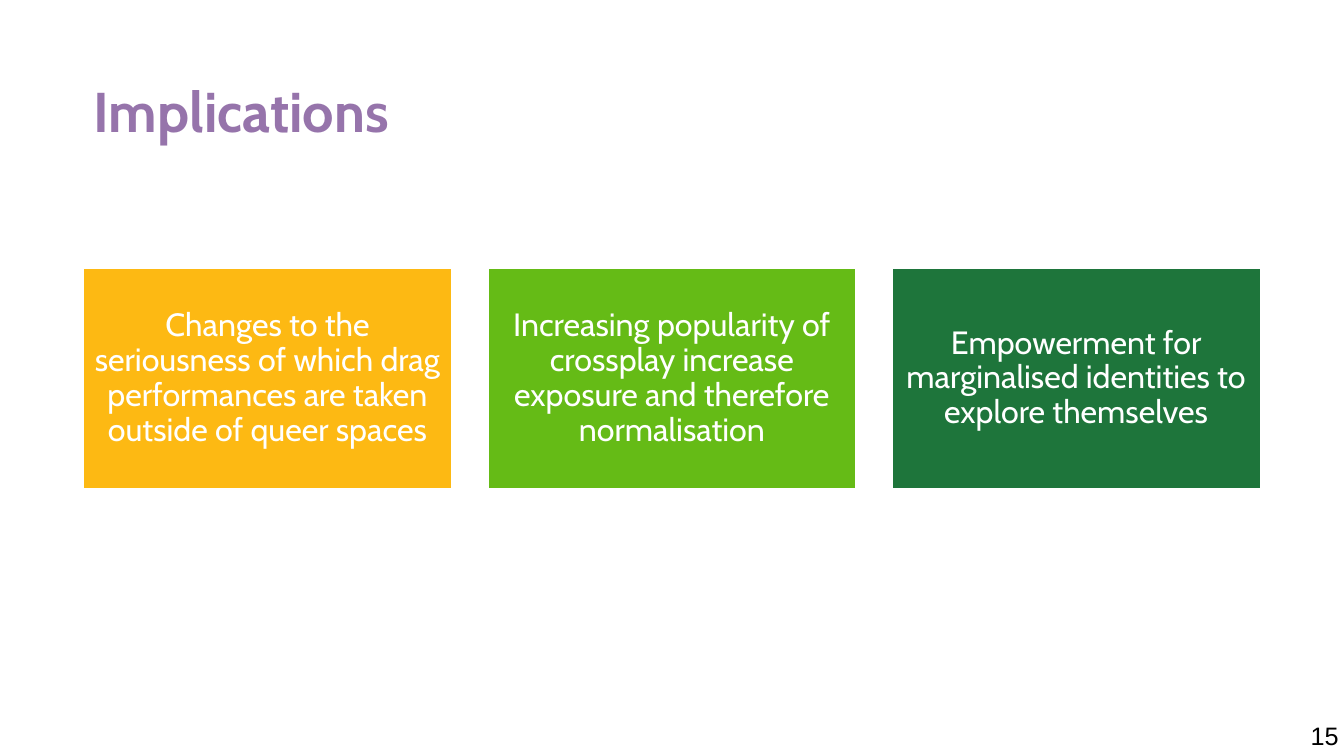
from pptx import Presentation, util as u
from pptx.dml.color import RGBColor
from pptx.enum import shapes, text

TITLE = "Implications"
PAGE_NUMBER = "15"
CARDS = [
    ("Changes to the seriousness of which drag performances are taken outside of queer spaces", "FDB913"),
    ("Increasing popularity of crossplay increase exposure and therefore normalisation", "65BB16"),
    ("Empowerment for marginalised identities to explore themselves", "1E753B"),
]
WIDTH, HEIGHT = 13.33, 7.5
MARGIN, CARD_TOP = 0.83, 2.66
CARD_WIDTH, CARD_HEIGHT, PITCH = 3.65, 2.19, 4.01


def colour(value):
    return RGBColor.from_string(value)


def inches(*values):
    return [u.Inches(value) for value in values]


def write(para, words, size, font, ink, bold=False):
    span = para.add_run()
    span.text = words
    span.font.size = u.Pt(size)
    span.font.name = font
    span.font.bold = bold
    span.font.color.rgb = colour(ink)


def add_title(page):
    title = page.shapes.title
    title.left, title.top, title.width, title.height = inches(MARGIN, 0.78, 11.58, 0.71)
    frame = title.text_frame
    frame.word_wrap = True
    frame.auto_size = text.MSO_AUTO_SIZE.NONE
    frame.vertical_anchor = text.MSO_ANCHOR.MIDDLE
    para = frame.paragraphs[0]
    para.alignment = text.PP_ALIGN.LEFT
    para.line_spacing = 0.9
    para.space_before = u.Pt(0)
    write(para, TITLE, 40, "Cabin", "9674AB", bold=True)


def add_card(page, column, words, fill):
    card = page.shapes.add_shape(
        shapes.MSO_SHAPE.RECTANGLE,
        *inches(MARGIN + column * PITCH, CARD_TOP, CARD_WIDTH, CARD_HEIGHT))
    card.shadow.inherit = False
    card.fill.solid()
    card.fill.fore_color.rgb = colour(fill)
    card.line.color.rgb = colour("FFFFFF")
    card.line.width = u.Pt(1)
    frame = card.text_frame
    frame.word_wrap = True
    frame.vertical_anchor = text.MSO_ANCHOR.MIDDLE
    frame.margin_left = frame.margin_right = u.Inches(0.1)
    frame.margin_top = frame.margin_bottom = u.Inches(0.1)
    para = frame.paragraphs[0]
    para.alignment = text.PP_ALIGN.CENTER
    para.line_spacing = 0.9
    write(para, words, 23, "Cabin", "FFFFFF")


def add_page_number(page):
    box = page.shapes.add_textbox(*inches(12.9, HEIGHT - 0.4, 0.57, 0.4))
    box.text_frame.word_wrap = True
    write(box.text_frame.paragraphs[0], PAGE_NUMBER, 18, "Arial", "000000")


def main():
    deck = Presentation()
    deck.slide_width, deck.slide_height = inches(WIDTH, HEIGHT)
    page = deck.slides.add_slide(deck.slide_layouts[5])
    add_title(page)
    for column, (words, fill) in enumerate(CARDS):
        add_card(page, column, words, fill)
    add_page_number(page)
    deck.save("out.pptx")


if __name__ == "__main__":
    main()
